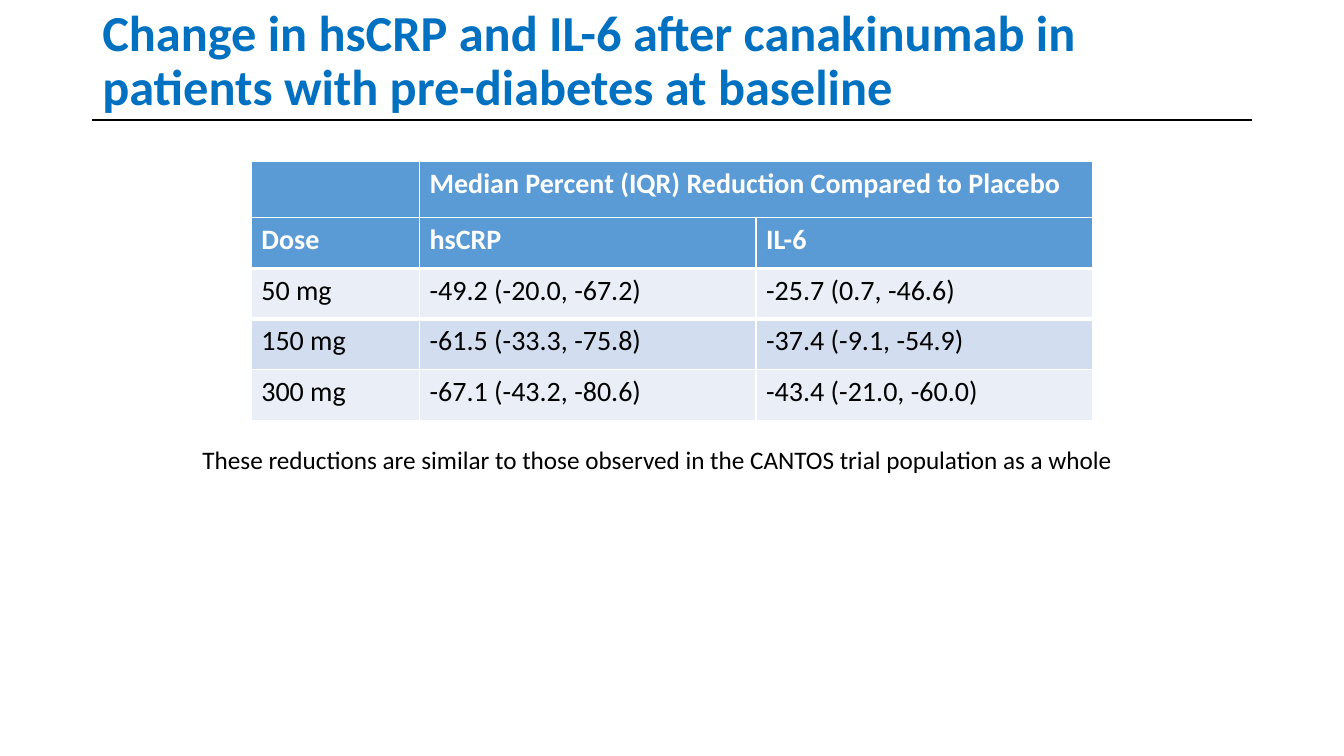
from lxml import etree
from pptx import Presentation
from pptx.dml.color import RGBColor
from pptx.enum.shapes import MSO_CONNECTOR
from pptx.enum.text import MSO_ANCHOR
from pptx.oxml.ns import qn
from pptx.util import Pt

LINE = MSO_CONNECTOR.STRAIGHT
MIDDLE = MSO_ANCHOR.MIDDLE


def color(code):
    return RGBColor.from_string(code)


def write(frame, text, size, code, bold=False):
    frame.word_wrap = True
    para = frame.paragraphs[0]
    para.text = text
    para.font.name = "Calibri"
    para.font.size = Pt(size)
    para.font.bold = bold
    para.font.color.rgb = color(code)
    return para


deck = Presentation()
deck.slide_width, deck.slide_height = Pt(960), Pt(540)
slide = deck.slides.add_slide(deck.slide_layouts[6])
shapes = slide.shapes

# Title and rule
title = shapes.add_textbox(Pt(66), Pt(10.8), Pt(828), Pt(67.7)).text_frame
title.vertical_anchor = MIDDLE
para = write(title, "Change in hsCRP and IL-6 after canakinumab in patients "
             "with pre-diabetes at baseline", 36, "0070C0", True)
para.line_spacing = 0.9
rule = shapes.add_connector(LINE, Pt(66), Pt(85.7), Pt(894), Pt(85.7))
rule.line.width = Pt(1.5)
rule.line.color.rgb = color("000000")
etree.SubElement(rule._element.spPr, qn("a:effectLst"))

# Table of reductions
rows = [
    ("", "Median Percent (IQR) Reduction Compared to Placebo", ""),
    ("Dose", "hsCRP", "IL-6"),
    ("50 mg", "-49.2 (-20.0, -67.2)", "-25.7 (0.7, -46.6)"),
    ("150 mg", "-61.5 (-33.3, -75.8)", "-37.4 (-9.1, -54.9)"),
    ("300 mg", "-67.1 (-43.2, -80.6)", "-43.4 (-21.0, -60.0)"),
]
fills = ["5B9BD5", "5B9BD5", "EAEFF7", "D2DEEF", "EAEFF7"]
edges = [1, 1, 3, 3, 1, 1]  # widths of the horizontal borders, top to bottom
table = shapes.add_table(5, 3, Pt(179.5), Pt(115.4), Pt(601), Pt(185)).table
for col, width in zip(table.columns, (120.2, 240.4, 240.4)):
    col.width = Pt(width)
for row, height in zip(table.rows, (40.2, 36.2, 36.2, 36.2, 36.2)):
    row.height = Pt(height)
table.cell(0, 1).merge(table.cell(0, 2))

for r, row in enumerate(rows):
    head = r < 2
    for c, text in enumerate(row):
        cell = table.cell(r, c)
        write(cell.text_frame, text, 20, "FFFFFF" if head else "000000", head)
        props = cell._tc.get_or_add_tcPr()
        sides = {"lnL": 1, "lnR": 1, "lnT": edges[r], "lnB": edges[r + 1]}
        for side, width in sides.items():
            edge = etree.SubElement(props, qn("a:" + side), w=str(Pt(width)))
            solid = etree.SubElement(edge, qn("a:solidFill"))
            etree.SubElement(solid, qn("a:srgbClr"), val="FFFFFF")
        cell.fill.solid()
        cell.fill.fore_color.rgb = color(fills[r])

# Closing note
note = shapes.add_textbox(Pt(137.5), Pt(313.9), Pt(685.4), Pt(29))
write(note.text_frame, "These reductions are similar to those observed in the "
      "CANTOS trial population as a whole", 18, "000000")

deck.save("out.pptx")
